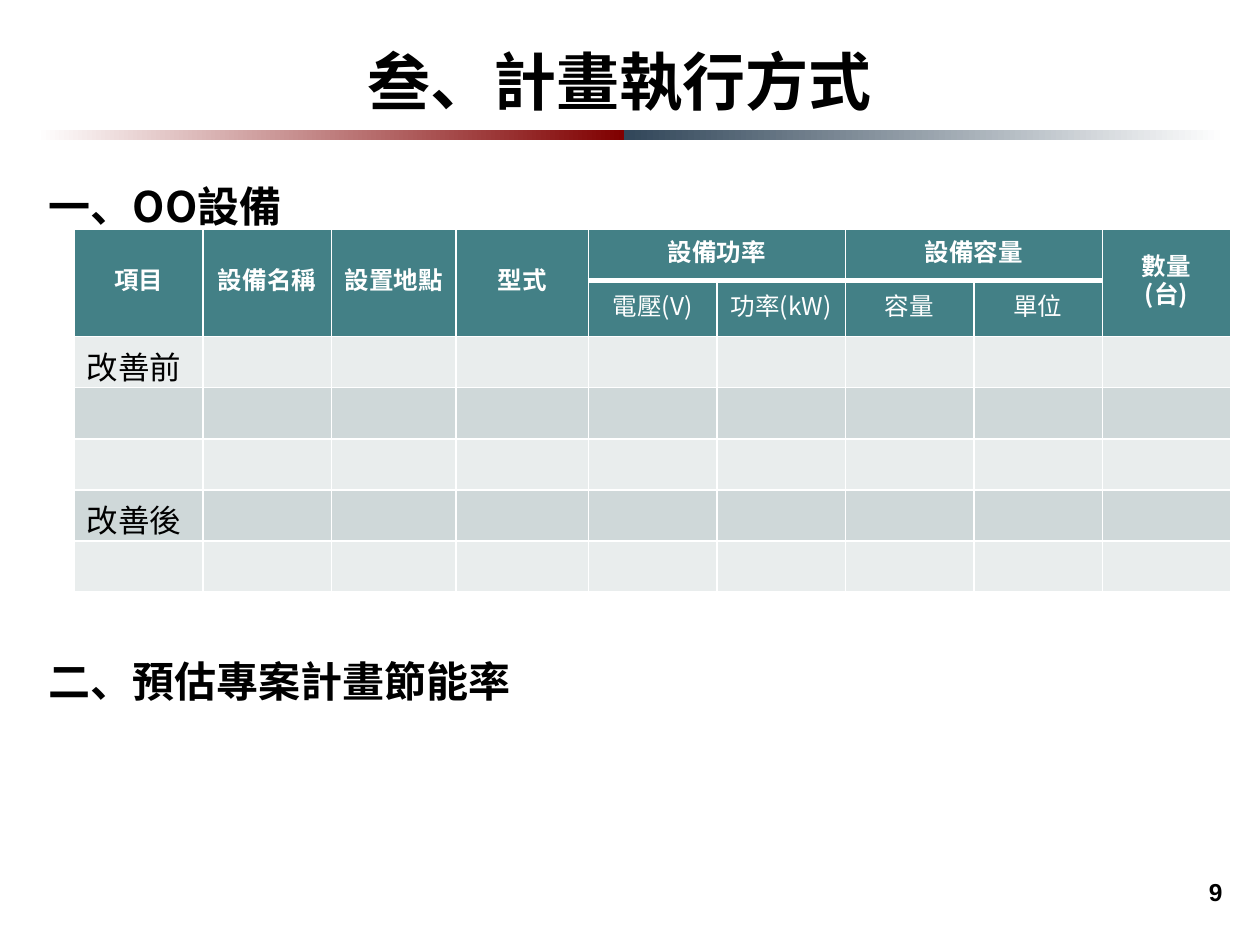
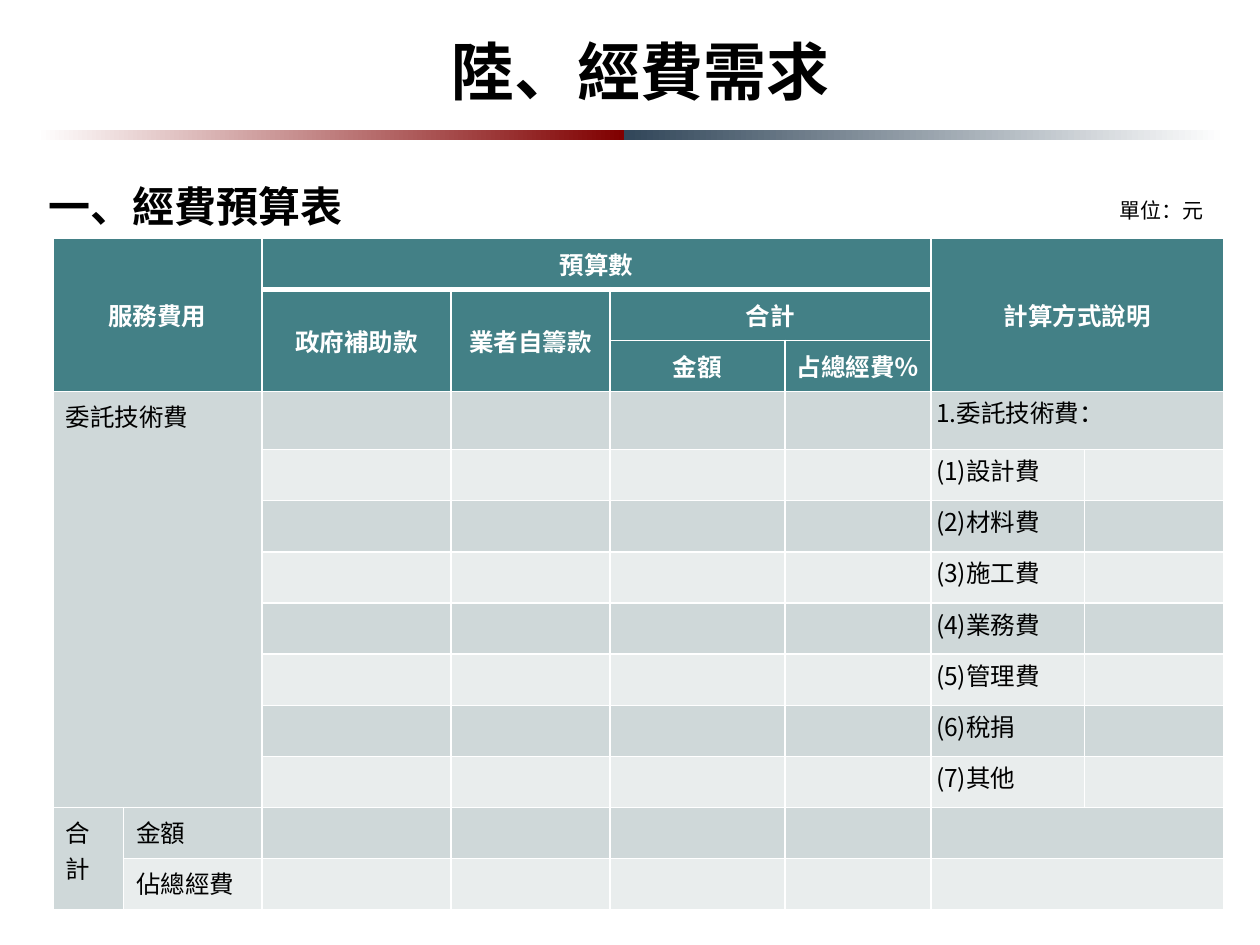
from pptx import Presentation
from pptx.dml.color import RGBColor
from pptx.enum.shapes import MSO_SHAPE
from pptx.enum.text import MSO_ANCHOR, PP_ALIGN
from pptx.oxml import parse_xml
from pptx.oxml.ns import nsdecls
from pptx.util import Inches, Pt

SANS = "Noto Sans CJK SC"
BLACK, WHITE = "000000", "FFFFFF"
RED, NAVY = "800000", "314659"
TEAL, PALE, GREY = "438086", "E9EDED", "CFD8D9"
TIGHT = (0.04, 0.02)


def color(code):
    return RGBColor.from_string(code)


def style(para, size, code=BLACK, bold=False, align=None, face=SANS):
    font = para.font
    font.name, font.size, font.bold = face, Pt(size), bold
    font.color.rgb = color(code)
    font._element.find("./{*}latin").addnext(
        parse_xml(f'<a:ea {nsdecls("a")} typeface="{face}"/>'))
    if align is not None:
        para.alignment = align


def add_text(slide, box, text, size, wrap=True, **look):
    shape = slide.shapes.add_textbox(*map(Inches, box))
    frame = shape.text_frame
    frame.word_wrap = wrap
    frame.text = text
    para = frame.paragraphs[0]
    style(para, size, **look)
    return shape


def add_title(slide, box, text):
    add_text(slide, box, text, 36, wrap=False, bold=True,
             align=PP_ALIGN.CENTER)


def add_heading(slide, top, text):
    shape = add_text(slide, (0, top, 8.98, 0.71), text, 24, bold=True)
    para = shape.text_frame.paragraphs[0]
    para.line_spacing = 1.5
    para.space_before = Pt(6)
    para._p.get_or_add_pPr().set("indent", str(Inches(0.29)))


def add_band(slide, left, top, width):
    """Draw the two-part rule that fades out at both ends."""
    half = width / 2 - 0.06
    parts = ((left, half, WHITE, RED), (left + half, width - half, NAVY, WHITE))
    for x, wide, start, end in parts:
        bar = slide.shapes.add_shape(MSO_SHAPE.RECTANGLE, Inches(x),
                                     Inches(top), Inches(wide), Inches(0.08))
        bar.shadow.inherit = False
        bar.line.fill.background()
        bar.fill.gradient()
        bar.fill.gradient_angle = 0
        for stop, code, place in zip(bar.fill.gradient_stops, (start, end), (0, 1)):
            stop.color.rgb = color(code)
            stop.position = place


def set_edges(cell, base=1):
    """Give a cell white borders, with the lower one base points wide."""
    props = cell._tc.get_or_add_tcPr()
    for spot, (side, width) in enumerate(
            (("L", 1), ("R", 1), ("T", 1), ("B", base))):
        props.insert(spot, parse_xml(
            f'<a:ln{side} {nsdecls("a")} w="{Pt(width)}"><a:solidFill>'
            f'<a:srgbClr val="{WHITE}"/></a:solidFill></a:ln{side}>'))


def add_grid(slide, left, top, cols, rows, head, odd):
    """Add a table with head teal rows, then rows of two greys, odd first."""
    frame = slide.shapes.add_table(len(rows), len(cols), Inches(left),
                                   Inches(top), Inches(sum(cols)),
                                   Inches(sum(rows)))
    grid = frame.table
    for col, width in zip(grid.columns, cols):
        col.width = Inches(width)
    for row, height in zip(grid.rows, rows):
        row.height = Inches(height)
    even = GREY if odd == PALE else PALE
    for r in range(len(rows)):
        for c in range(len(cols)):
            cell = grid.cell(r, c)
            cell.fill.solid()
            cell.fill.fore_color.rgb = color(
                TEAL if r < head else (odd, even)[(r - head) % 2])
    return grid


def put(grid, row, col, text="", span=(1, 1), size=14, inset=None, **look):
    cell = grid.cell(row, col)
    if span != (1, 1):
        cell.merge(grid.cell(row + span[0] - 1, col + span[1] - 1))
    if inset:
        cell.margin_left = cell.margin_right = Inches(inset[0])
        cell.margin_top = cell.margin_bottom = Inches(inset[1])
    if text:
        cell.text = text
        for para in cell.text_frame.paragraphs:
            style(para, size, **look)
    return cell


def put_head(grid, row, col, text, span=(1, 1), inset=TIGHT, bold=True,
             pitch=None):
    cell = put(grid, row, col, text, span, inset=inset, code=WHITE,
               bold=bold, align=PP_ALIGN.CENTER)
    cell.vertical_anchor = MSO_ANCHOR.MIDDLE
    for para in cell.text_frame.paragraphs:
        para.line_spacing = pitch


def rule_grid(grid, tops):
    """Border all cells; tops holds (column, rows, columns) of top heads."""
    thick = {(r, c) for col, high, wide in tops
             for r in range(high) for c in range(col, col + wide)
             if r == high - 1}
    for r in range(len(grid.rows)):
        for c in range(len(grid.columns)):
            set_edges(grid.cell(r, c), 3 if (r, c) in thick else 1)


def add_devices(slide, left, top):
    cols = [1.02, 1.02, 0.99, 1.05] + [1.02] * 5
    grid = add_grid(slide, left, top, cols, [0.406] * 7, 2, PALE)
    heads = (("項目", 0, 2, 1), ("設備名稱", 1, 2, 1), ("設置地點", 2, 2, 1),
             ("型式", 3, 2, 1), ("設備功率", 4, 1, 2), ("設備容量", 6, 1, 2),
             ("數量\n(台)", 8, 2, 1))
    for text, col, high, wide in heads:
        put_head(grid, 0, col, text, (high, wide), (0, 0), pitch=Pt(16))
    for col, text in enumerate(("電壓(V)", "功率(kW)", "容量", "單位"), 4):
        put_head(grid, 1, col, text, inset=(0, 0), bold=False, pitch=Pt(16))
    for row, text in ((2, "改善前"), (5, "改善後")):
        put(grid, row, 0, text, size=18)
    rule_grid(grid, [head[1:] for head in heads])


def add_budget(slide, left, top):
    cols = [0.56, 1.1, 1.5, 1.26, 1.39, 1.16, 1.22, 1.1]
    rows = [0.406] * 3 + [0.46] + [0.406] * 9
    grid = add_grid(slide, left, top, cols, rows, 3, GREY)
    heads = (("服務費用", 0, 3, 2), ("預算數", 2, 1, 4),
             ("計算方式說明", 6, 3, 2))
    for text, col, high, wide in heads:
        put_head(grid, 0, col, text, (high, wide))
    put_head(grid, 1, 2, "政府補助款", (2, 1))
    put_head(grid, 1, 3, "業者自籌款", (2, 1))
    put_head(grid, 1, 4, "合計", (1, 2))
    put_head(grid, 2, 4, "金額")
    put_head(grid, 2, 5, "占總經費％")

    put(grid, 3, 0, "委託技術費", (8, 2))
    put(grid, 3, 6, "1.委託技術費：", (1, 2), inset=TIGHT)
    fees = ("設計費", "材料費", "施工費", "業務費", "管理費", "稅捐", "其他")
    for count, fee in enumerate(fees, 1):
        put(grid, 3 + count, 6, f"({count}){fee}", inset=TIGHT)

    put(grid, 11, 0, "合計", (2, 1))
    for row, text in ((11, "金額"), (12, "佔總經費")):
        put(grid, row, 1, text)
        put(grid, row, 6, span=(1, 2))
    rule_grid(grid, [head[1:] for head in heads])


def add_page(deck, box, title):
    slide = deck.slides.add_slide(deck.slide_layouts[6])
    add_band(slide, 0.29, 1.03, 9.44)
    add_title(slide, box, title)
    return slide


def plan_slide(deck):
    slide = add_page(deck, (2.8, 0.29, 4.24, 0.71), "叁、計畫執行方式")
    number = add_text(slide, (7.72, 6.83, 2.08, 0.5), "9", 14, wrap=False,
                      bold=True, align=PP_ALIGN.RIGHT, face="Arial")
    number.text_frame.vertical_anchor = MSO_ANCHOR.MIDDLE
    add_devices(slide, 0.59, 1.82)
    add_heading(slide, 1.18, "一、OO設備")
    add_heading(slide, 4.95, "二、預估專案計畫節能率")


def cost_slide(deck):
    slide = add_page(deck, (3.47, 0.21, 3.23, 0.71), "陸、經費需求")
    add_heading(slide, 1.18, "一、經費預算表")
    add_budget(slide, 0.42, 1.89)
    add_text(slide, (7.52, 1.52, 2.13, 0.3), "單位：元", 12,
             align=PP_ALIGN.RIGHT)


def main():
    deck = Presentation()
    deck.slide_width, deck.slide_height = Inches(10), Inches(7.5)
    plan_slide(deck)
    cost_slide(deck)
    deck.save("out.pptx")


if __name__ == "__main__":
    main()
